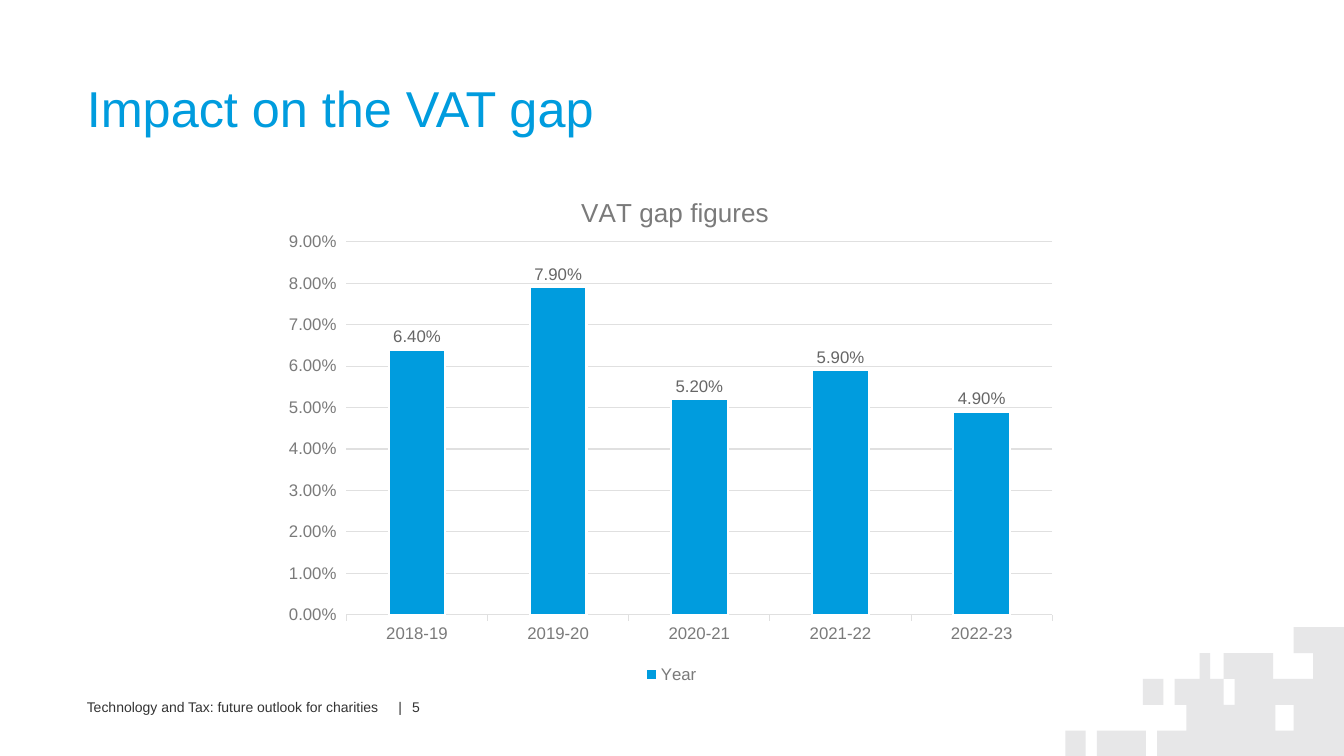
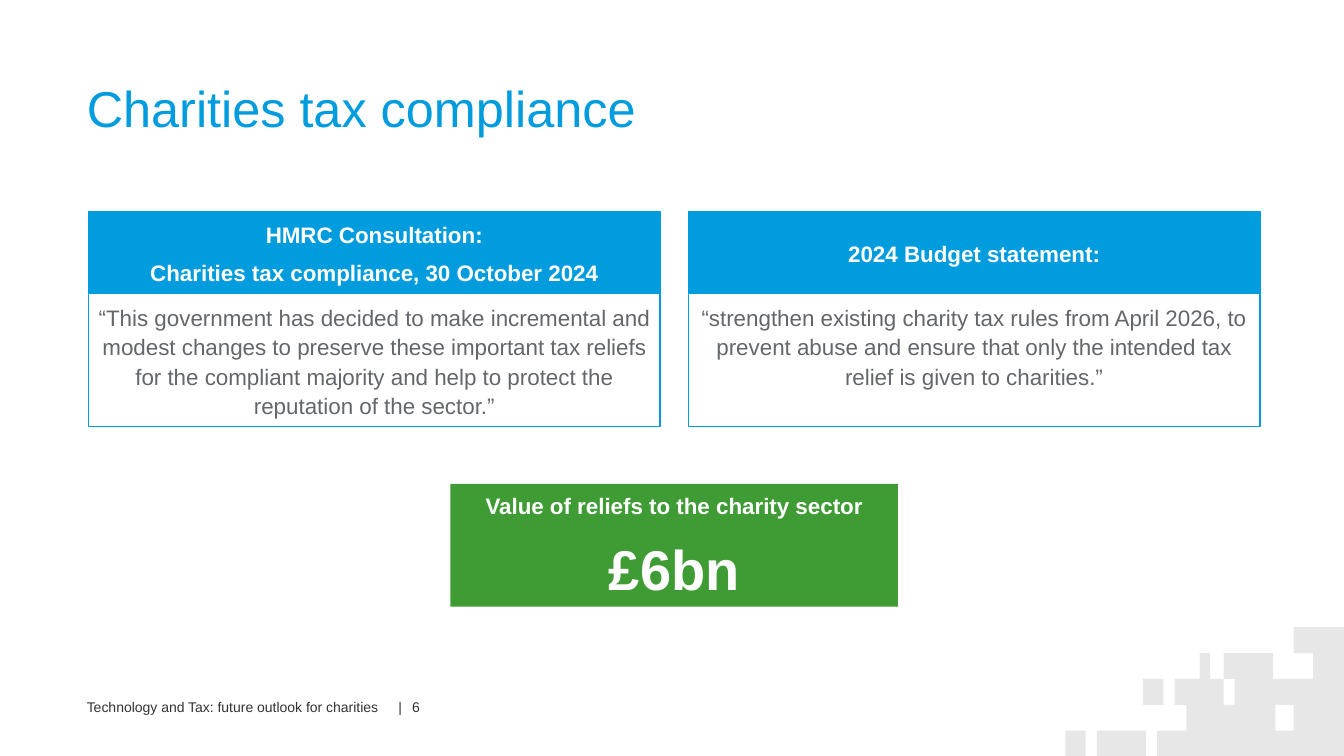
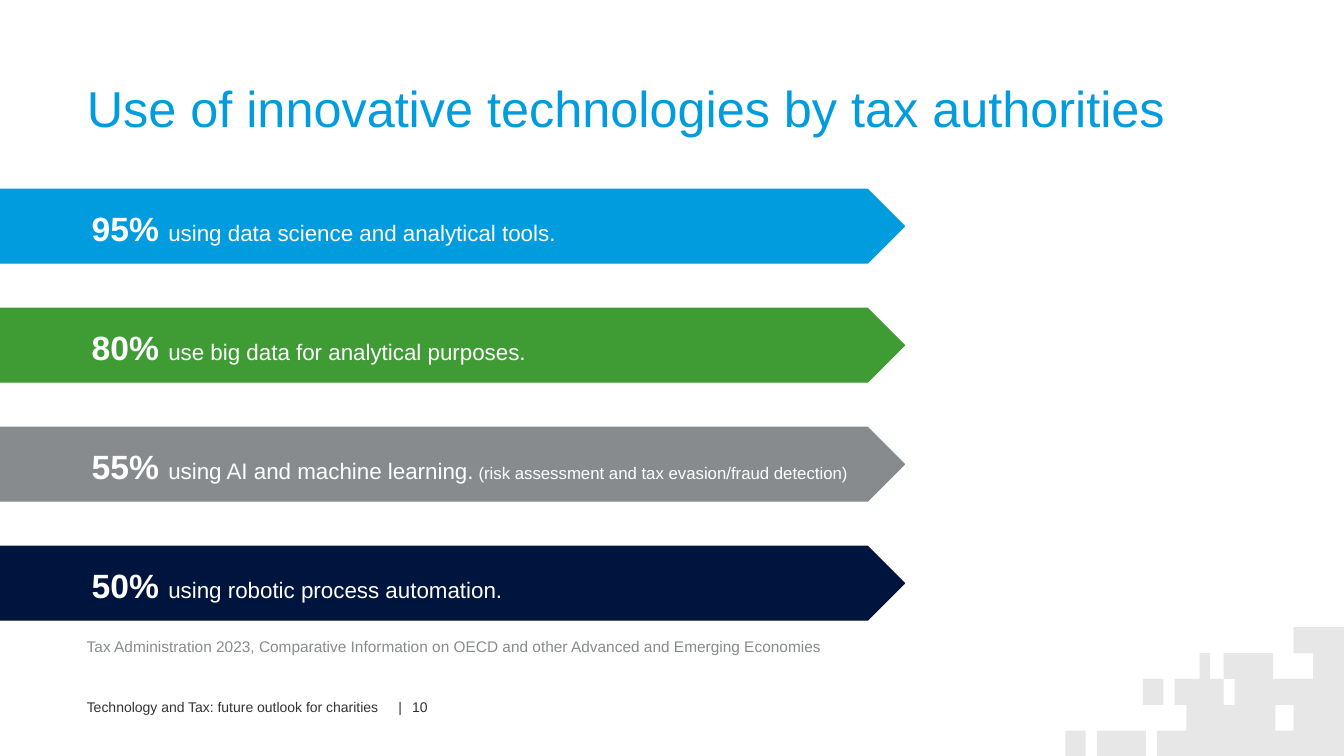
from lxml import etree
from pptx import Presentation
from pptx.chart.data import CategoryChartData
from pptx.dml.color import RGBColor
from pptx.enum.chart import XL_CHART_TYPE, XL_LABEL_POSITION, XL_LEGEND_POSITION, XL_TICK_MARK
from pptx.enum.shapes import MSO_SHAPE
from pptx.enum.text import MSO_ANCHOR, MSO_AUTO_SIZE, PP_ALIGN
from pptx.oxml.ns import qn
from pptx.util import Pt

COLUMNS = XL_CHART_TYPE.COLUMN_CLUSTERED
LABEL_ABOVE = XL_LABEL_POSITION.OUTSIDE_END
LEGEND_BELOW = XL_LEGEND_POSITION.BOTTOM
TICK_OUTSIDE = XL_TICK_MARK.OUTSIDE
RECTANGLE = MSO_SHAPE.RECTANGLE
ARROW = MSO_SHAPE.PENTAGON
TOP, MIDDLE, BOTTOM = MSO_ANCHOR.TOP, MSO_ANCHOR.MIDDLE, MSO_ANCHOR.BOTTOM
LEFT, CENTER = PP_ALIGN.LEFT, PP_ALIGN.CENTER
NO_AUTOFIT = MSO_AUTO_SIZE.NONE

FONT = "Arial"
BLUE, GREEN, GREY, NAVY = "009CDE", "3F9C35", "888B8D", "00153D"
WHITE, INK, BODY_GREY, MOSAIC_GREY = "FFFFFF", "333333", "63666A", "E7E7E8"
AXIS_GREY, GRID_GREY, LABEL_GREY = "7A7A7A", "E0E0E0", "666666"
SLIDE_WIDTH, SLIDE_HEIGHT = 960, 540
MARGIN = 62
PERCENT = "0.00%"
FOOTER = "Technology and Tax: future outlook for charities"

ROWS = [448, 466.5, 485, 503.5, 522, 540]
MOSAIC_OUTLINE = [
    (924, 0), (960, 0), (960, 5), (826.5, 5), (826.5, 4), (847.5, 4),
    (847.5, 3), (839, 3), (839, 2), (857, 2), (857, 1), (864.5, 1),
    (864.5, 2), (874, 2), (874, 1), (909.5, 1), (909.5, 2), (938, 2),
    (938, 1), (924, 1),
]
MOSAIC_TILES = [(783.5, 818.5, 4), (761, 775.5, 4), (816.5, 831, 2)]
MOSAIC_HOLES = [(911, 924, 3), (874, 882, 2)]


def color(value):
    return RGBColor.from_string(value)


def style_font(font, size, value, bold=False):
    font.name = FONT
    font.size = Pt(size)
    font.bold = bold
    font.color.rgb = color(value)


def place(shape, box):
    shape.left, shape.top, shape.width, shape.height = map(Pt, box)


def write_text(shape, paragraphs, value, insets=(0, 0, 0, 0), anchor=TOP,
               align=LEFT, spacing=1.0, gap=0):
    frame = shape.text_frame
    frame.word_wrap = True
    frame.auto_size = NO_AUTOFIT
    frame.vertical_anchor = anchor
    frame.margin_left, frame.margin_top, frame.margin_right, frame.margin_bottom = map(Pt, insets)
    for index, runs in enumerate(paragraphs):
        paragraph = frame.add_paragraph() if index else frame.paragraphs[0]
        paragraph.alignment = align
        paragraph.line_spacing = spacing
        paragraph.space_before = Pt(gap if index else 0)
        for text, size, bold in runs:
            run = paragraph.add_run()
            run.text = text
            style_font(run.font, size, value, bold)


def add_text(slide, box, text, size, value, inset=0):
    shape = slide.shapes.add_textbox(*map(Pt, box))
    write_text(shape, [[(text, size, False)]], value, (inset,) * 4)


def add_panel(slide, kind, box, fill=None, line=None):
    shape = slide.shapes.add_shape(kind, *map(Pt, box))
    shape.shadow.inherit = False
    if fill:
        shape.fill.solid()
        shape.fill.fore_color.rgb = color(fill)
    else:
        shape.fill.background()
    if line:
        shape.line.color.rgb = color(line)
        shape.line.width = Pt(1)
    else:
        shape.line.fill.background()
    return shape


def tile_corners(left, right, row):
    return [(left, row), (right, row), (right, row + 1), (left, row + 1)]


def add_mosaic(slide):
    contours = [MOSAIC_OUTLINE]
    contours += [tile_corners(*tile) for tile in MOSAIC_TILES]
    contours += [tile_corners(*hole)[::-1] for hole in MOSAIC_HOLES]
    contours = [[(Pt(x), Pt(ROWS[row])) for x, row in contour] for contour in contours]
    builder = slide.shapes.build_freeform(*contours[0][0])
    for index, contour in enumerate(contours):
        if index:
            builder.move_to(*contour[0])
        builder.add_line_segments(contour[1:], close=True)
    mosaic = builder.convert_to_shape()
    mosaic.shadow.inherit = False
    mosaic.fill.solid()
    mosaic.fill.fore_color.rgb = color(MOSAIC_GREY)
    mosaic.line.fill.background()


def add_base_slide(presentation, title, number):
    slide = presentation.slides.add_slide(presentation.slide_layouts[5])
    add_mosaic(slide)
    place(slide.shapes.title, (MARGIN, 54.5, 836, 44))
    write_text(slide.shapes.title, [[(title, 36, False)]], BLUE, anchor=BOTTOM)
    for left, width, text in [(MARGIN, 220, FOOTER), (284.5, 6, "|"), (294.5, 20, number)]:
        add_text(slide, (left, 499, width, 13), text, 10, INK)
    return slide


def set_layout(element, **values):
    layout = element.find(qn("c:layout"))
    if layout is None:
        layout = etree.Element(qn("c:layout"))
        element.insert(0, layout)
    manual = etree.SubElement(layout, qn("c:manualLayout"))
    settings = {"xMode": "edge", "yMode": "edge", **values}
    if "w" in values:
        settings = {"layoutTarget": "inner", **settings}
    for name, value in settings.items():
        etree.SubElement(manual, qn("c:" + name)).set("val", str(value))


def style_axis(axis):
    axis.major_tick_mark = TICK_OUTSIDE
    style_font(axis.tick_labels.font, 12, AXIS_GREY)


def style_hairline(line):
    line.color.rgb = color(GRID_GREY)
    line.width = Pt(0.75)


def add_gap_chart(slide, box):
    data = CategoryChartData(number_format=PERCENT)
    data.categories = ["2018-19", "2019-20", "2020-21", "2021-22", "2022-23"]
    data.add_series("Year", [0.064, 0.079, 0.052, 0.059, 0.049])
    chart = slide.shapes.add_chart(COLUMNS, *map(Pt, box), data).chart
    style_font(chart.font, 10, INK)

    chart.has_title = True
    title = chart.chart_title.text_frame
    title.text = "VAT gap figures"
    style_font(title.paragraphs[0].runs[0].font, 18.6, AXIS_GREY)
    set_layout(chart.chart_title._element, x=0.38, y=0.04)
    set_layout(chart.plots[0]._element.getparent(), x=0.09, y=0.14, w=0.89, h=0.72)

    chart.has_legend = True
    chart.legend.position = LEGEND_BELOW
    chart.legend.include_in_layout = False
    style_font(chart.legend.font, 12, AXIS_GREY)

    style_axis(chart.category_axis)
    style_hairline(chart.category_axis.format.line)
    values = chart.value_axis
    style_axis(values)
    values.format.line.fill.background()
    style_hairline(values.major_gridlines.format.line)
    values.minimum_scale, values.maximum_scale, values.major_unit = 0, 0.09, 0.01
    values.tick_labels.number_format = PERCENT
    values.tick_labels.number_format_is_linked = False

    plot = chart.plots[0]
    plot.gap_width = 150
    plot.vary_by_categories = False
    plot.has_data_labels = True
    labels = plot.data_labels
    labels.show_value = True
    labels.position = LABEL_ABOVE
    labels.number_format = PERCENT
    labels.number_format_is_linked = False
    style_font(labels.font, 12, LABEL_GREY)
    bars = plot.series[0].format
    bars.fill.solid()
    bars.fill.fore_color.rgb = color(BLUE)
    bars.line.color.rgb = color(WHITE)
    bars.line.width = Pt(1.5)


def add_quote_card(slide, box, headings, quote):
    left, top, width, height = box
    header_height = 58.3
    header = add_panel(slide, RECTANGLE, (left, top, width, header_height), BLUE, BLUE)
    write_text(header, [[(heading, 16, True)] for heading in headings], WHITE,
               (5.76,) * 4, MIDDLE, CENTER, 1.1, 6)
    body_box = (left, top + header_height, width, height - header_height)
    body = add_panel(slide, RECTANGLE, body_box, line=BLUE)
    write_text(body, [[(quote, 16, False)]], BODY_GREY, (5.76,) * 4, TOP, CENTER, 1.1)


def add_value_callout(slide, box, label, value):
    callout = add_panel(slide, RECTANGLE, box, GREEN)
    write_text(callout, [[(label, 16, True)], [(value, 40, True)]], WHITE,
               (5.76,) * 4, MIDDLE, CENTER, 1.1, 6)


def add_share_arrow(slide, box, fill, share, text, detail):
    arrow = add_panel(slide, ARROW, box, fill, fill)
    runs = [(share + " ", 24, True), (text, 16, False)]
    if detail:
        runs.append((" " + detail, 12, False))
    write_text(arrow, [runs], WHITE, (65.5, 11.5, 11.5, 11.5), MIDDLE, LEFT, 1.1)


def build_gap_slide(presentation):
    slide = add_base_slide(presentation, "Impact on the VAT gap", "5")
    add_gap_chart(slide, (196.5, 121, 566.5, 370))


def build_compliance_slide(presentation):
    slide = add_base_slide(presentation, "Charities tax compliance", "6")
    add_value_callout(slide, (321.8, 345.6, 319.7, 87.8),
                      "Value of reliefs to the charity sector", "£6bn")
    cards = [
        (["HMRC Consultation:", "Charities tax compliance, 30 October 2024"],
         "“This government has decided to make incremental and modest changes to preserve "
         "these important tax reliefs for the compliant majority and help to protect the "
         "reputation of the sector.”"),
        (["2024 Budget statement:"],
         "“strengthen existing charity tax rules from April 2026, to prevent abuse and "
         "ensure that only the intended tax relief is given to charities.”"),
    ]
    width, gap = 408.3, 20.1
    for index, (headings, quote) in enumerate(cards):
        box = (63.3 + index * (width + gap), 151.2, width, 153.3)
        add_quote_card(slide, box, headings, quote)


def build_technology_slide(presentation):
    slide = add_base_slide(presentation, "Use of innovative technologies by tax authorities", "10")
    arrows = [
        (BLUE, "95%", "using data science and analytical tools.", ""),
        (GREEN, "80%", "use big data for analytical purposes.", ""),
        (GREY, "55%", "using AI and machine learning.",
         "(risk assessment and tax evasion/fraud detection)"),
        (NAVY, "50%", "using robotic process automation.", ""),
    ]
    for index, arrow in enumerate(arrows):
        add_share_arrow(slide, (0, 135.3 + index * 85, 646, 52.6), *arrow)
    add_text(slide, (56.2, 449.3, 667.5, 24.5),
             "Tax Administration 2023, Comparative Information on OECD and other "
             "Advanced and Emerging Economies", 11, GREY, 5.76)


def main():
    presentation = Presentation()
    presentation.slide_width = Pt(SLIDE_WIDTH)
    presentation.slide_height = Pt(SLIDE_HEIGHT)
    build_gap_slide(presentation)
    build_compliance_slide(presentation)
    build_technology_slide(presentation)
    presentation.save("out.pptx")


if __name__ == "__main__":
    main()
